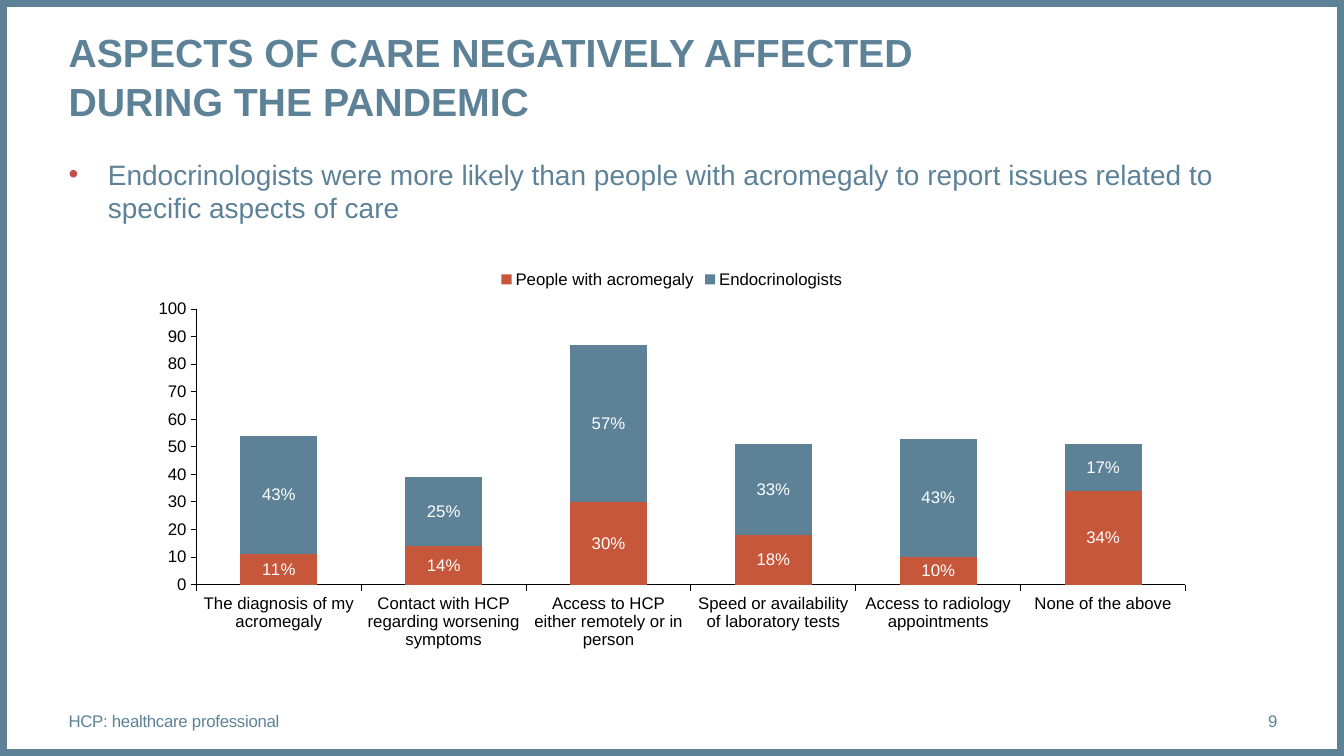
"""Build the slide on aspects of care affected during the pandemic."""
from lxml.etree import SubElement
from pptx import Presentation
from pptx.chart.data import CategoryChartData as ChartData
from pptx.dml.color import RGBColor as Color
from pptx.enum.chart import XL_CHART_TYPE as ChartType, XL_LABEL_POSITION as LabelSpot
from pptx.enum.chart import XL_LEGEND_POSITION as LegendSpot, XL_TICK_MARK as Tick
from pptx.enum.shapes import MSO_SHAPE as Shape
from pptx.enum.text import MSO_ANCHOR as Anchor, MSO_AUTO_SIZE as AutoSize, PP_ALIGN as Align
from pptx.oxml.ns import qn
from pptx.util import Inches, Pt

THEME = {
    "font": "Arial",
    "slate": Color.from_string("5D8298"),
    "rust": Color.from_string("C6573B"),
    "bullet": "C0504D",
    "black": Color.from_string("000000"),
    "white": Color.from_string("FFFFFF"),
    "title": Pt(28),
    "body": Pt(20),
    "small": Pt(12),
}

deck = Presentation()
deck.slide_width, deck.slide_height = Inches(13.33), Inches(7.5)
page = deck.slides.add_slide(deck.slide_layouts[5])


def area(left, top, width, height):
    """Turn percentages of the slide into a position and a size."""
    return [round(side * share / 100) for side, share in zip(
        (deck.slide_width, deck.slide_height) * 2, (left, top, width, height))]


def style(font, size, color, bold=False):
    """Give a font the theme typeface with a size, colour and weight."""
    for name, value in {"name": THEME["font"], "size": size, "bold": bold}.items():
        setattr(font, name, value)
    font.color.rgb = color


border = page.shapes.add_shape(Shape.RECTANGLE, *area(0, 0, 100, 100))
border.shadow.inherit = False
border.fill.background()
border.line.color.rgb = THEME["slate"]
border.line.width = Pt(10)
page.shapes.title._element.addprevious(border._element)

LEFT, FOOT, FOOT_HEIGHT = 5.1, 92.67, 5.33
texts = {
    "title": ("ASPECTS OF CARE NEGATIVELY AFFECTED DURING THE PANDEMIC",
              (LEFT, 3.73, 71.72, 12.53), "title", Anchor.MIDDLE, Align.LEFT),
    "message": ("Endocrinologists were more likely than people with acromegaly to report "
                "issues related to specific aspects of care",
                (LEFT, 20.8, 89.95, 66), "body", Anchor.TOP, Align.LEFT),
    "number": ("9", (86.27, FOOT, 8.78, FOOT_HEIGHT), "small", Anchor.MIDDLE, Align.RIGHT),
    "footnote": ("HCP: healthcare professional",
                 (LEFT, FOOT, 66.62, FOOT_HEIGHT), "small", Anchor.MIDDLE, Align.LEFT),
}
paras = {}
for role, (words, share, size, anchor, align) in texts.items():
    place = area(*share)
    box = page.shapes.title if role == "title" else page.shapes.add_textbox(*place)
    for name, value in zip(("left", "top", "width", "height"), place):
        setattr(box, name, value)
    frame_format = {
        "margin_left": 0, "margin_top": 0, "margin_right": 0, "margin_bottom": 0,
        "word_wrap": True, "auto_size": AutoSize.NONE, "vertical_anchor": anchor,
    }
    for name, value in frame_format.items():
        setattr(box.text_frame, name, value)
    para = paras[role] = box.text_frame.paragraphs[0]
    para.alignment = align
    span = para.add_run()
    span.text = words
    style(span.font, THEME[size], THEME["slate"], role == "title")

paras["title"].line_spacing = 1.04
paras["footnote"].runs[0].font._element.set("spc", "-20")
bullet = paras["message"]._element.get_or_add_pPr()
for name, value in {"marL": Inches(0.39), "indent": -Inches(0.39)}.items():
    bullet.set(name, str(value))
SubElement(SubElement(bullet, qn("a:buClr")), qn("a:srgbClr")).set("val", THEME["bullet"])
SubElement(bullet, qn("a:buFont")).set("typeface", THEME["font"])
SubElement(bullet, qn("a:buChar")).set("char", "•")

data = ChartData()
data.categories = [
    "The diagnosis of my acromegaly",
    "Contact with HCP regarding worsening symptoms",
    "Access to HCP either remotely or in person",
    "Speed or availability of laboratory tests",
    "Access to radiology appointments",
    "None of the above",
]
data.add_series("People with acromegaly", (11, 14, 30, 18, 10, 34))
data.add_series("Endocrinologists", (43, 25, 57, 33, 43, 17))
chart = page.shapes.add_chart(
    ChartType.COLUMN_STACKED, *area(10.2, 34.27, 79.6, 52.53), data).chart
style(chart.font, THEME["small"], THEME["black"])
chart.has_title = False
chart.has_legend = True
for name, value in {"position": LegendSpot.TOP, "include_in_layout": False}.items():
    setattr(chart.legend, name, value)
style(chart.legend.font, THEME["small"], THEME["black"])

for axis in (chart.category_axis, chart.value_axis):
    axis_format = {"has_major_gridlines": False, "major_tick_mark": Tick.OUTSIDE,
                   "minor_tick_mark": Tick.NONE}
    for name, value in axis_format.items():
        setattr(axis, name, value)
    style(axis.tick_labels.font, THEME["small"], THEME["black"])
    axis.format.line.color.rgb = THEME["black"]
    axis.format.line.width = Pt(0.75)
for name, value in {"minimum_scale": 0, "maximum_scale": 100, "major_unit": 10}.items():
    setattr(chart.value_axis, name, value)

plot = chart.plots[0]
for name, value in {"gap_width": 114, "overlap": 100, "vary_by_categories": False}.items():
    setattr(plot, name, value)
label_format = {"show_value": True, "position": LabelSpot.CENTER,
                "number_format": '0"%"', "number_format_is_linked": False}
for series, color in zip(plot.series, ("rust", "slate")):
    series.format.fill.solid()
    series.format.fill.fore_color.rgb = THEME[color]
    for name, value in label_format.items():
        setattr(series.data_labels, name, value)
    style(series.data_labels.font, THEME["small"], THEME["white"])

deck.save("out.pptx")
